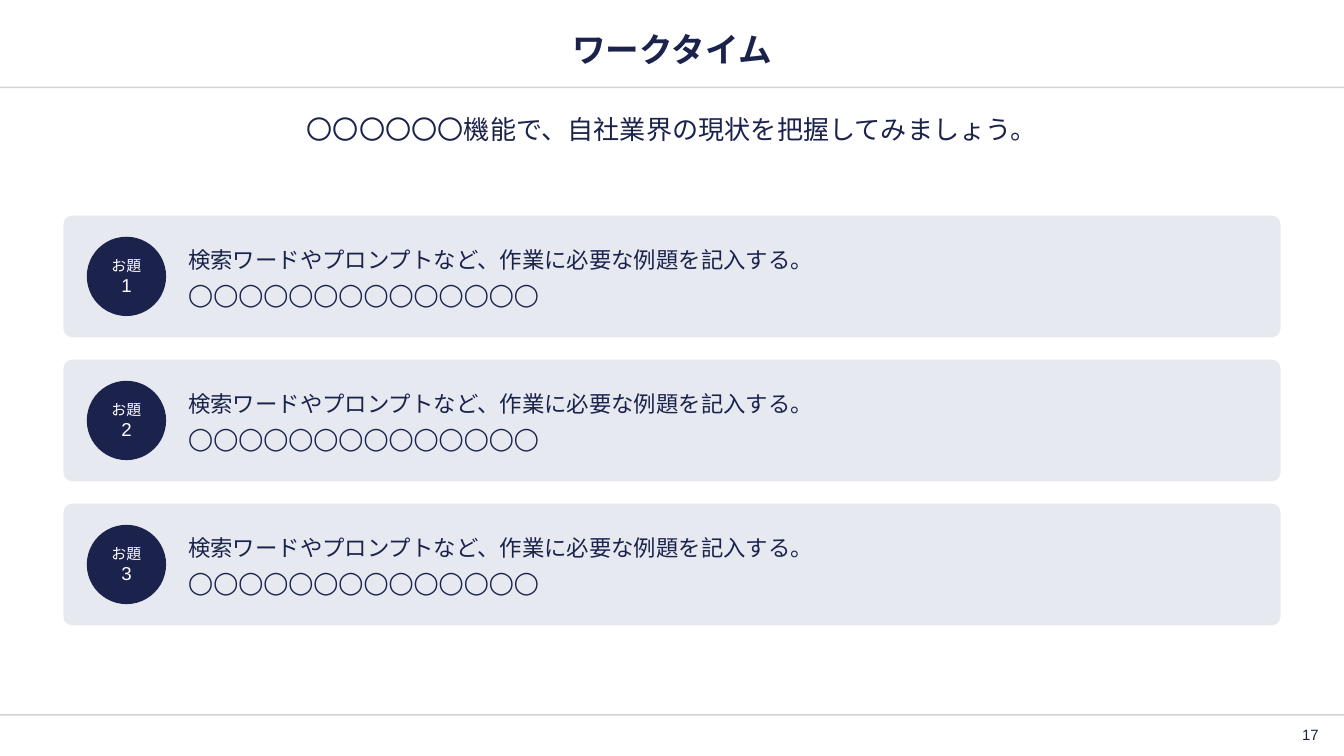
from pptx import Presentation
from pptx.dml.color import RGBColor
from pptx.enum.shapes import MSO_CONNECTOR, MSO_SHAPE
from pptx.enum.text import MSO_ANCHOR, PP_ALIGN
from pptx.oxml.ns import qn
from pptx.util import Pt
from lxml import etree

NAVY = RGBColor(0x1B, 0x22, 0x4C)
PALE = RGBColor(0xE6, 0xEA, 0xF0)
WHITE = RGBColor(0xFF, 0xFF, 0xFF)

WIDTH, HEIGHT = 720, 405
MARGIN = 34
CONTENT_WIDTH = WIDTH - 2 * MARGIN

TASK = ["検索ワードやプロンプトなど、作業に必要な例題を記入する。", "◯" * 14]
TASK_COUNT = 3


def write(shape, lines, color, align, anchor, insets, bold=False):
    """Fill a shape with (text, size) lines; insets are left, top, right, bottom."""
    frame = shape.text_frame
    frame.word_wrap = True
    frame.vertical_anchor = anchor
    (frame.margin_left, frame.margin_top,
     frame.margin_right, frame.margin_bottom) = map(Pt, insets)
    for index, (text, size) in enumerate(lines):
        paragraph = frame.add_paragraph() if index else frame.paragraphs[0]
        paragraph.text = text
        paragraph.alignment = align
        paragraph.font.name = "Arial"
        paragraph.font.size = Pt(size)
        paragraph.font.bold = bold
        paragraph.font.color.rgb = color
    return frame.paragraphs


def add_label(slide, box, text, size, align, anchor=MSO_ANCHOR.MIDDLE, bold=False):
    label = slide.shapes.add_textbox(*map(Pt, box))
    write(label, [(text, size)], NAVY, align, anchor, (3, 3, 3, 3), bold)


def add_filled(slide, kind, box, color):
    shape = slide.shapes.add_shape(kind, *map(Pt, box))
    shape.shadow.inherit = False
    shape.fill.solid()
    shape.fill.fore_color.rgb = color
    shape.line.fill.background()
    return shape


def add_rule(slide, y):
    rule = slide.shapes.add_connector(
        MSO_CONNECTOR.STRAIGHT, Pt(0), Pt(y), Pt(WIDTH), Pt(y))
    rule.line.width = Pt(0.75)
    rule.line.color.rgb = NAVY
    properties = rule._element.spPr
    # 20 % opacity, no shadow
    tint = properties.find(".//" + qn("a:srgbClr"))
    etree.SubElement(tint, qn("a:alpha"), val="20000")
    etree.SubElement(properties, qn("a:effectLst"))


def add_header(slide, left, top, width, height):
    add_rule(slide, 46.8)
    add_label(slide, (left, top, width, height), "ワークタイム", 18,
              PP_ALIGN.CENTER, bold=True)


def add_footer(slide, left, top, width, height):
    add_rule(slide, 383)
    add_label(slide, (left, top, width, height), "17", 8, PP_ALIGN.RIGHT)


def add_task(slide, number, left, top, width, height):
    # Card with the task text
    card = add_filled(slide, MSO_SHAPE.ROUNDED_RECTANGLE,
                      (left, top, width, height), PALE)
    card.adjustments[0] = 0.07
    lines = write(card, [(text, 12) for text in TASK], NAVY, PP_ALIGN.LEFT,
                  MSO_ANCHOR.MIDDLE, (65.5, 6, 6, 6))
    lines[1].space_before = Pt(4)

    # Numbered badge, centred on the card's height
    diameter = 42.5
    badge = add_filled(slide, MSO_SHAPE.OVAL,
                       (left + 12.5, top + (height - diameter) / 2,
                        diameter, diameter), NAVY)
    write(badge, [("お題", 8), (str(number), 10)], WHITE, PP_ALIGN.CENTER,
          MSO_ANCHOR.MIDDLE, (0, 0, 0, 0))


def add_task_list(slide, left, top, width, height):
    gap = 12
    card_height = (height - gap * (TASK_COUNT - 1)) / TASK_COUNT
    for index in range(TASK_COUNT):
        add_task(slide, index + 1, left, top + index * (card_height + gap),
                 width, card_height)


def main():
    deck = Presentation()
    deck.slide_width, deck.slide_height = Pt(WIDTH), Pt(HEIGHT)
    slide = deck.slides.add_slide(deck.slide_layouts[6])

    add_header(slide, MARGIN, 12.5, CONTENT_WIDTH, 28)
    add_footer(slide, 681, 386.5, 28.5, 14.5)
    # Lead sentence
    add_label(slide, (MARGIN, 57.5, CONTENT_WIDTH, 42.5),
              "〇〇〇〇〇〇機能で、自社業界の現状を把握してみましょう。", 14,
              PP_ALIGN.CENTER, MSO_ANCHOR.TOP)
    add_task_list(slide, MARGIN, 115.5, CONTENT_WIDTH, 219.5)

    deck.save("out.pptx")


if __name__ == "__main__":
    main()
